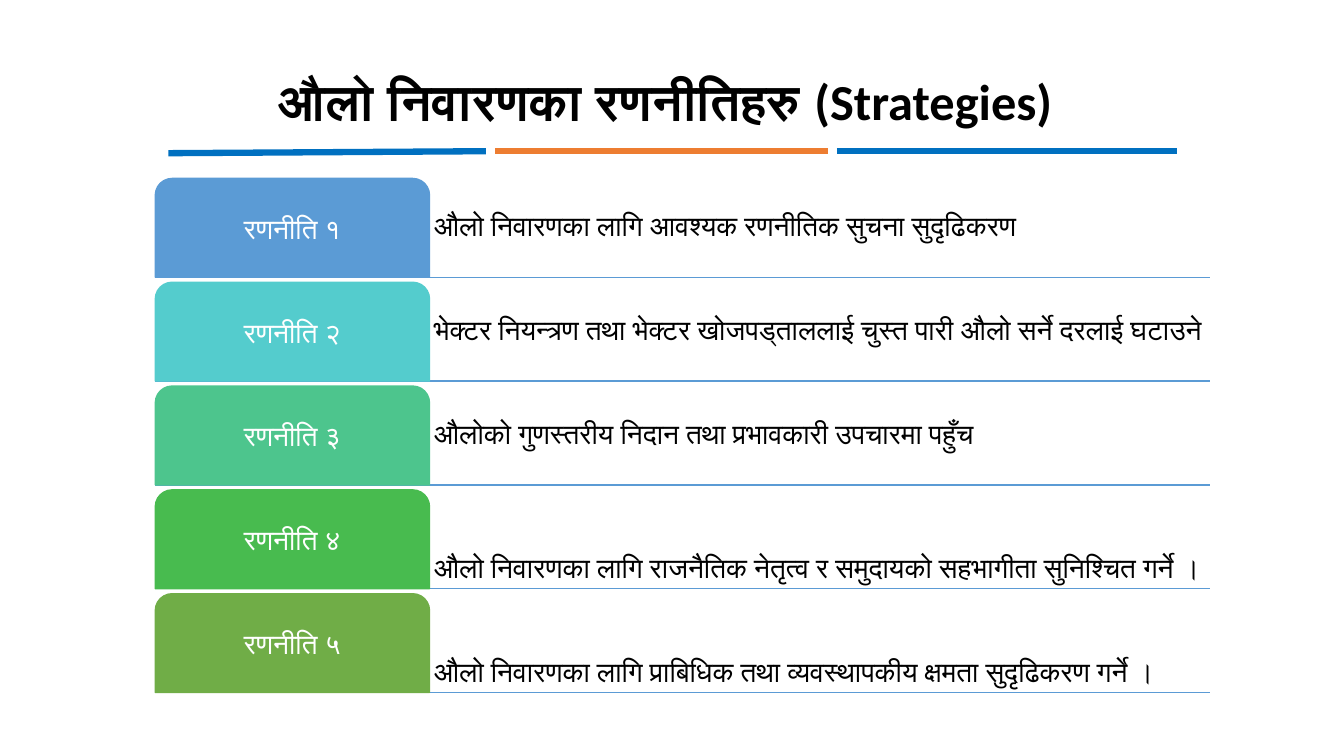
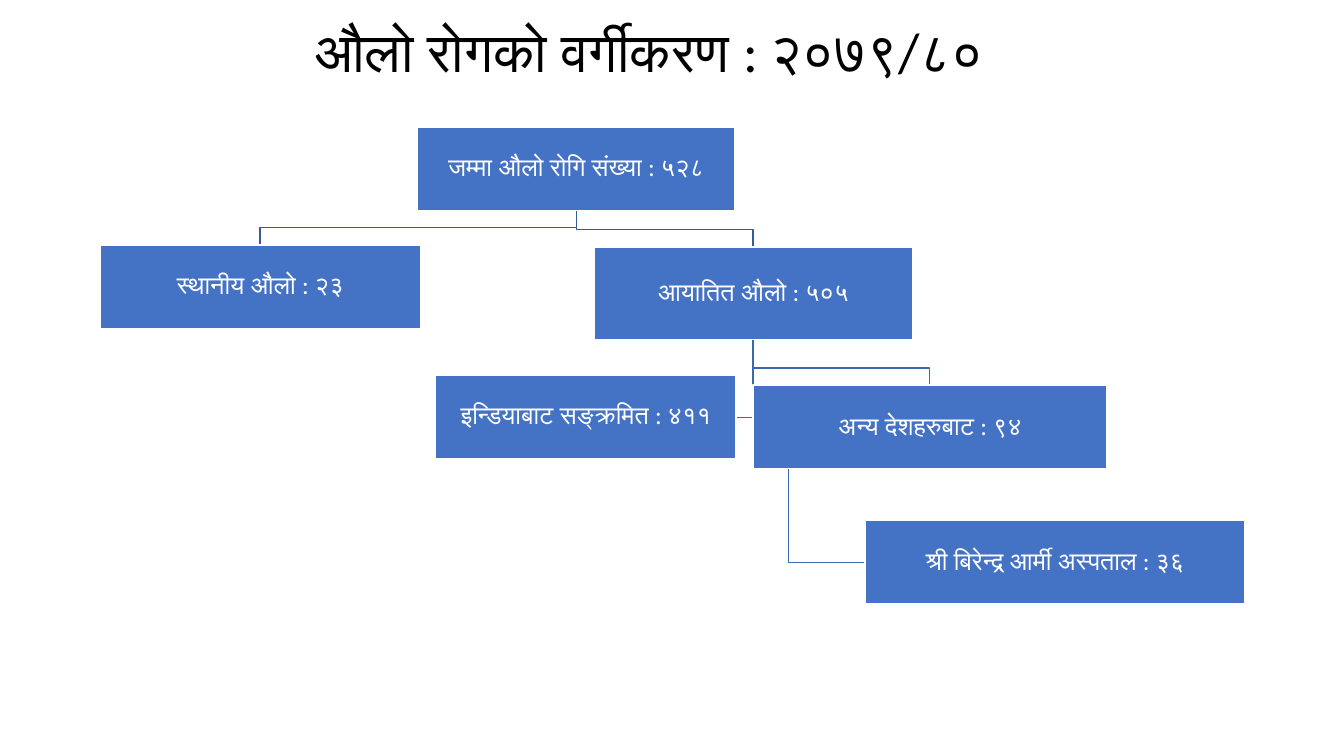
from dataclasses import dataclass

from lxml import etree
from pptx import Presentation
from pptx import util as u
from pptx.dml.color import RGBColor
from pptx.enum import shapes, text
from pptx.oxml import ns

PX = u.Inches(1) // 100


@dataclass(frozen=True)
class Theme:
    font: str = "Calibri"
    ink: str = "000000"
    paper: str = "FFFFFF"
    blue_bar: str = "0070C0"
    orange_bar: str = "ED7D31"
    rule: str = "5B9BD5"
    node: str = "4472C4"
    upper_link: str = "365B9D"
    lower_link: str = "3E67B2"
    strategy_title: float = 36
    chart_title: float = 39.6
    strategy_text: float = 20
    node_text: float = 18
    thin: float = 1
    thick: float = 4.5


THEME = Theme()

STRATEGIES = [
    ("रणनीति १", "5B9BD5", "औलो निवारणका लागि आवश्यक रणनीतिक सुचना सुदृढिकरण", text.MSO_ANCHOR.MIDDLE),
    ("रणनीति २", "54CCCD", "भेक्टर नियन्त्रण तथा भेक्टर खोजपड्ताललाई चुस्त पारी औलो सर्ने दरलाई घटाउने",
     text.MSO_ANCHOR.MIDDLE),
    ("रणनीति ३", "4DC58D", "औलोको गुणस्तरीय निदान तथा प्रभावकारी उपचारमा पहुँच", text.MSO_ANCHOR.MIDDLE),
    ("रणनीति ४", "48BB4F", "औलो निवारणका लागि राजनैतिक नेतृत्व र समुदायको सहभागीता सुनिश्चित गर्ने ।",
     text.MSO_ANCHOR.BOTTOM),
    ("रणनीति ५", "70AD47", "औलो निवारणका लागि प्राबिधिक तथा व्यवस्थापकीय क्षमता सुदृढिकरण गर्ने ।",
     text.MSO_ANCHOR.BOTTOM),
]

NODES = {
    "total": ("जम्मा औलो रोगि संख्या : ५२८", (414, 126, 315, 83)),
    "local": ("स्थानीय औलो : २३", (99, 243, 318, 83)),
    "imported": ("आयातित औलो : ५०५", (589, 245, 316, 92)),
    "other": ("अन्य देशहरुबाट : ९४", (747, 382, 351, 83)),
    "hospital": ("श्री बिरेन्द्र आर्मी अस्पताल : ३६", (858, 516, 377, 83)),
    "india": ("इन्डियाबाट सङ्क्रमित : ४११", (432, 372, 298, 83)),
}


def to_emu(lengths):
    return [length * PX for length in lengths]


def write(box, words, size, color, inset, anchor=text.MSO_ANCHOR.MIDDLE,
          align=text.PP_ALIGN.CENTER, bold=False):
    frame = box.text_frame
    frame.text = words
    frame.word_wrap = True
    frame.auto_size = text.MSO_AUTO_SIZE.NONE
    frame.vertical_anchor = anchor
    frame.margin_left = frame.margin_right = inset * PX
    frame.margin_top = frame.margin_bottom = inset * PX
    para = frame.paragraphs[0]
    para.alignment = align
    para.line_spacing = 0.9
    span = para.runs[0]
    span.font.name = THEME.font
    span.font.size = u.Pt(size)
    span.font.bold = bold
    span.font.color.rgb = RGBColor.from_string(color)


def set_line(shape, color, weight):
    shape.line.color.rgb = RGBColor.from_string(color)
    shape.line.width = u.Pt(weight)


def add_page(deck, title, place, size, bold=False):
    page = deck.slides.add_slide(deck.slide_layouts[5])
    box = page.shapes.title
    box.left, box.top, box.width, box.height = to_emu(place)
    write(box, title, size, THEME.ink, 5, bold=bold)
    return page


def add_line(page, ends, color, weight):
    line = page.shapes.add_connector(shapes.MSO_CONNECTOR.STRAIGHT, *to_emu(ends))
    set_line(line, color, weight)
    etree.SubElement(line._element.spPr, ns.qn("a:effectLst"))


def add_panel(page, kind, place, fill, border):
    panel = page.shapes.add_shape(kind, *to_emu(place))
    panel.shadow.inherit = False
    panel.fill.solid()
    panel.fill.fore_color.rgb = RGBColor.from_string(fill)
    set_line(panel, border, THEME.thin)
    return panel


def add_link(page, points, color):
    builder = page.shapes.build_freeform(*points[0], scale=PX)
    builder.add_line_segments(points[1:], close=False)
    link = builder.convert_to_shape()
    link.shadow.inherit = False
    link.fill.background()
    set_line(link, color, THEME.thin)


def branch(parent, child):
    parent_x, parent_bottom = parent[0] + parent[2] / 2, parent[1] + parent[3]
    child_x, child_top = child[0] + child[2] / 2, child[1]
    bend = child_top - 17
    return [(parent_x, parent_bottom), (parent_x, bend), (child_x, bend), (child_x, child_top)]


def side_branch(parent, child, share, child_edge):
    stem = parent[0] + parent[2] * share
    middle = child[1] + child[3] / 2
    return [(stem, parent[1] + parent[3]), (stem, middle), (child_edge, middle)]


def build_strategies(deck):
    page = add_page(deck, "औलो निवारणका रणनीतिहरु (Strategies)", (229, 43, 862, 120),
                    THEME.strategy_title, bold=True)
    left, right, tab_width, top, pitch, height = 154, 1200, 272, 177, 103, 98
    for index, (label, color, words, anchor) in enumerate(STRATEGIES):
        row = top + index * pitch
        add_line(page, (left, row + height, right, row + height), THEME.rule, THEME.thin)
        tab = add_panel(page, shapes.MSO_SHAPE.ROUND_2_SAME_RECTANGLE,
                        (left, row, tab_width, height), color, color)
        tab.adjustments[0], tab.adjustments[1] = 0.17, 0
        write(tab, label, THEME.strategy_text, THEME.paper, 4)
        box = page.shapes.add_textbox(
            *to_emu((left + tab_width, row, right - left - tab_width, height)))
        write(box, words, THEME.strategy_text, THEME.ink, 4, anchor, text.PP_ALIGN.LEFT)
    for ends, color in [((167, 152, 482, 150), THEME.blue_bar),
                        ((491, 150, 821, 150), THEME.orange_bar),
                        ((830, 150, 1167, 150), THEME.blue_bar)]:
        add_line(page, ends, color, THEME.thick)


def build_classification(deck):
    page = add_page(deck, "औलो रोगको वर्गीकरण : २०७९/८०", (45, 22, 1197, 64), THEME.chart_title)
    place = {name: node[1] for name, node in NODES.items()}
    india, hospital = place["india"], place["hospital"]
    add_link(page, side_branch(place["imported"], india, 0.5, india[0] + india[2]),
             THEME.lower_link)
    add_link(page, side_branch(place["other"], hospital, 0.1, hospital[0]), THEME.lower_link)
    for parent, child, color in [("imported", "other", THEME.lower_link),
                                 ("total", "imported", THEME.upper_link),
                                 ("total", "local", THEME.upper_link)]:
        add_link(page, branch(place[parent], place[child]), color)
    for words, spot in NODES.values():
        node = add_panel(page, shapes.MSO_SHAPE.RECTANGLE, spot, THEME.node, THEME.paper)
        write(node, words, THEME.node_text, THEME.paper, 1)


def main():
    deck = Presentation()
    deck.slide_width, deck.slide_height = to_emu((1333, 750))
    build_strategies(deck)
    build_classification(deck)
    deck.save("out.pptx")


if __name__ == "__main__":
    main()
